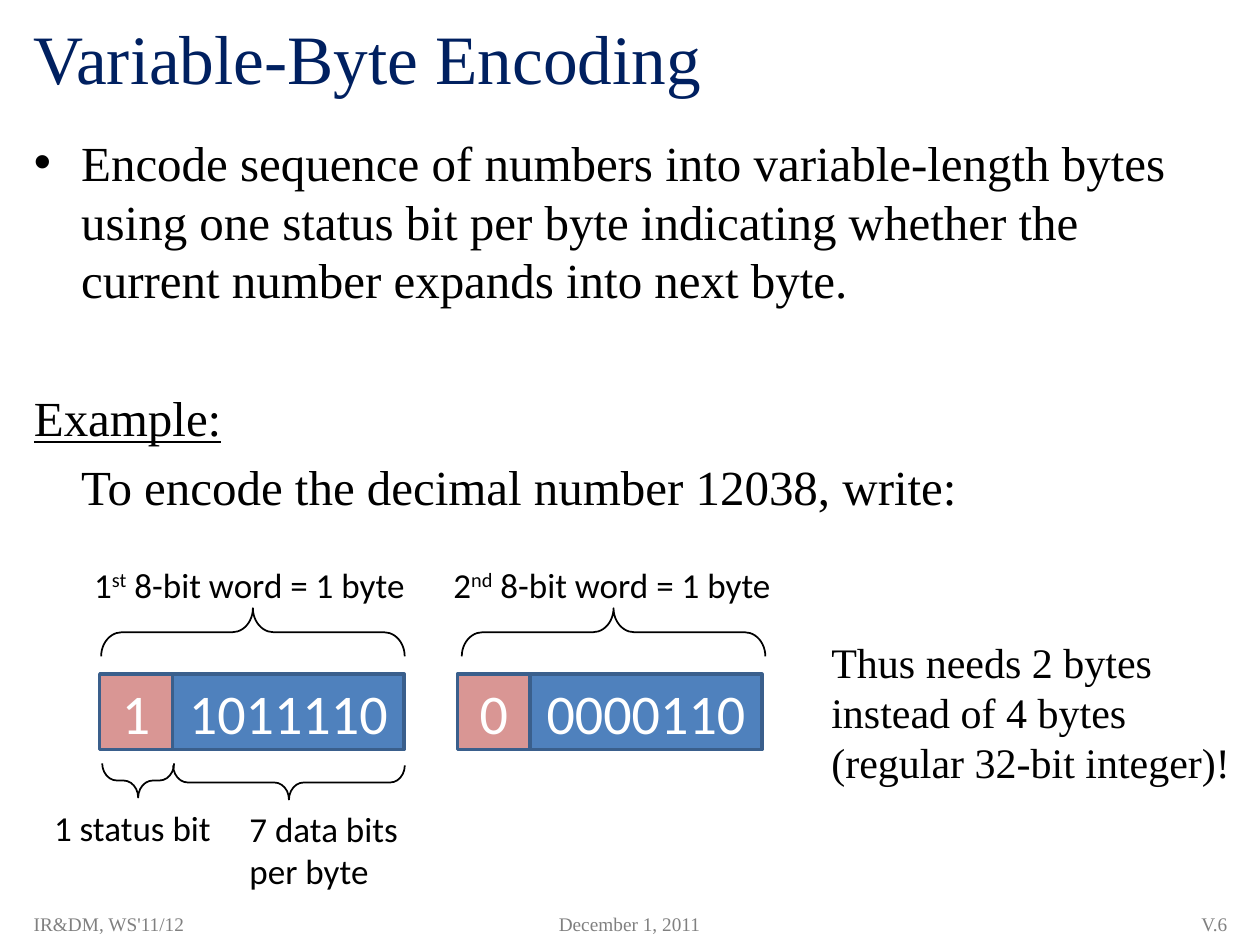
from pptx import Presentation
from pptx.dml.color import RGBColor
from pptx.enum.shapes import MSO_SHAPE
from pptx.enum.text import MSO_ANCHOR, MSO_AUTO_SIZE, PP_ALIGN
from pptx.oxml.xmlchemy import OxmlElement
from pptx.util import Cm, Pt

RECTANGLE, BRACE = MSO_SHAPE.RECTANGLE, MSO_SHAPE.RIGHT_BRACE
TOP, MIDDLE = MSO_ANCHOR.TOP, MSO_ANCHOR.MIDDLE
LEFT, CENTER, RIGHT = PP_ALIGN.LEFT, PP_ALIGN.CENTER, PP_ALIGN.RIGHT
FIXED = MSO_AUTO_SIZE.NONE

SERIF, SANS = "Times New Roman", "Calibri"
BLACK, WHITE, GRAY, NAVY = "000000", "FFFFFF", "808080", "002060"
DATA_FILL, STATUS_FILL, CELL_LINE = "4F81BD", "D99694", "3A5F8C"
POINT_UP, POINT_DOWN = 270, 90


def color(hex_code):
    return RGBColor.from_string(hex_code)


class EncodingSlide:
    def __init__(self, slide):
        self.slide = slide

    def style(self, paragraph, font, size, hex_code, align=LEFT):
        paragraph.alignment = align
        paragraph.font.name = font
        paragraph.font.size = Pt(size)
        paragraph.font.color.rgb = color(hex_code)

    def place(self, shape, box):
        shape.left, shape.top, shape.width, shape.height = map(Cm, box)

    def title(self, text, box):
        title = self.slide.shapes.title
        self.place(title, box)
        title.text_frame.text = text
        title.text_frame.auto_size = FIXED
        title.text_frame.vertical_anchor = MIDDLE
        self.style(title.text_frame.paragraphs[0], SERIF, 39.6, NAVY)

    def body(self, items, box):
        """Fill the body with (text, bulleted, indent, space before, underlined) items."""
        body = self.slide.placeholders[1]
        self.place(body, box)
        frame = body.text_frame
        frame.text = "\n".join(item[0] for item in items)
        frame.auto_size = FIXED
        for paragraph, item in zip(frame.paragraphs, items):
            _, bulleted, indent, space_before, underlined = item
            self.style(paragraph, SERIF, 28, BLACK)
            paragraph.space_before = Pt(space_before)
            paragraph.font.underline = underlined
            if not bulleted:
                properties = paragraph._p.get_or_add_pPr()
                properties.set("marL", str(Cm(indent)))
                properties.set("indent", "0")
                properties.insert_element_before(
                    OxmlElement("a:buNone"), "a:tabLst", "a:defRPr", "a:extLst")

    def text(self, lines, box, font=SANS, size=20, hex_code=BLACK,
             align=LEFT, anchor=TOP, wrap=False):
        """Add a text box; a line is a list of runs, every second one raised."""
        frame = self.slide.shapes.add_textbox(*map(Cm, box)).text_frame
        frame.word_wrap = wrap
        frame.vertical_anchor = anchor
        for number, runs in enumerate(lines):
            paragraph = frame.add_paragraph() if number else frame.paragraphs[0]
            self.style(paragraph, font, size, hex_code, align)
            for position, words in enumerate(runs):
                run = paragraph.add_run()
                run.text = words
                if position % 2:
                    run._r.get_or_add_rPr().set("baseline", "30000")

    def footer(self, text, left, width, align):
        self.text([[text]], (left, 18.21, width, 0.84), SERIF, 11, GRAY,
                  align, MIDDLE, wrap=True)

    def bits(self, digits, left, width, fill):
        cell = self.slide.shapes.add_shape(
            RECTANGLE, Cm(left), Cm(13.59), Cm(width), Cm(1.52))
        cell.shadow.inherit = False
        cell.fill.solid()
        cell.fill.fore_color.rgb = color(fill)
        cell.line.color.rgb = color(CELL_LINE)
        cell.line.width = Pt(2)
        frame = cell.text_frame
        frame.text = digits
        frame.word_wrap = False
        frame.vertical_anchor = MIDDLE
        self.style(frame.paragraphs[0], SANS, 32, WHITE, CENTER)

    def brace(self, left, top, span, depth, rotation):
        """Add a horizontal brace, given by the area it covers once turned."""
        brace = self.slide.shapes.add_shape(
            BRACE, Cm(left + (span - depth) / 2), Cm(top + (depth - span) / 2),
            Cm(depth), Cm(span))
        brace.rotation = rotation
        brace.adjustments[0] = 0.43
        brace.shadow.inherit = False
        brace.fill.background()
        brace.line.color.rgb = color(BLACK)
        brace.line.width = Pt(1)


def main():
    deck = Presentation()
    deck.slide_width, deck.slide_height = Cm(25.4), Cm(19.05)
    page = EncodingSlide(deck.slides.add_slide(deck.slide_layouts[1]))

    page.title("Variable-Byte Encoding", (0.43, 0.2, 24.56, 1.9))
    page.body([
        ("Encode sequence of numbers into variable-length bytes using one status "
         "bit per byte indicating whether the current number expands into next byte.",
         True, 0, 5.6, False),
        ("Example:", False, 0, 45, True),
        ("To encode the decimal number 12038, write:", False, 0.95, 5.6, False),
    ], (0.43, 2.54, 24.56, 8.26))

    status_width, data_width = 1.47, 4.67
    words = [
        ("1", "st", "1", "1011110", 2.01, 2.04, 1.65, 7.04),
        ("2", "nd", "0", "0000110", 9.22, 9.31, 8.89, 7.26),
    ]
    for (number, ordinal, status, data,
         word_left, brace_left, label_left, label_width) in words:
        page.text([[number, ordinal, " 8-bit word = 1 byte"]],
                  (label_left, 11.23, label_width, 1.12))
        page.brace(brace_left, 12.26, 6.12, 0.97, POINT_UP)
        page.bits(data, word_left + status_width, data_width, DATA_FILL)
        page.bits(status, word_left, status_width, STATUS_FILL)

    page.brace(2.06, 15.39, 1.45, 0.69, POINT_DOWN)
    page.brace(3.49, 15.43, data_width, 0.69, POINT_DOWN)
    page.text([["1 status bit"]], (0.84, 16.13, 3.71, 1.12))
    page.text([["7 data bits"], ["per byte"]], (4.78, 16.15, 3.53, 1.96))
    page.text([["Thus needs 2 bytes"], ["instead of 4 bytes"],
               ["(regular 32-bit integer)!"]],
              (16.51, 12.7, 8.61, 3.33), SERIF, 24)

    page.footer("IR&DM, WS'11/12", 0.43, 7.62, LEFT)
    page.footer("December 1, 2011", 9.73, 5.92, CENTER)
    page.footer("V.6", 19.48, 5.51, RIGHT)

    deck.save("out.pptx")


if __name__ == "__main__":
    main()
